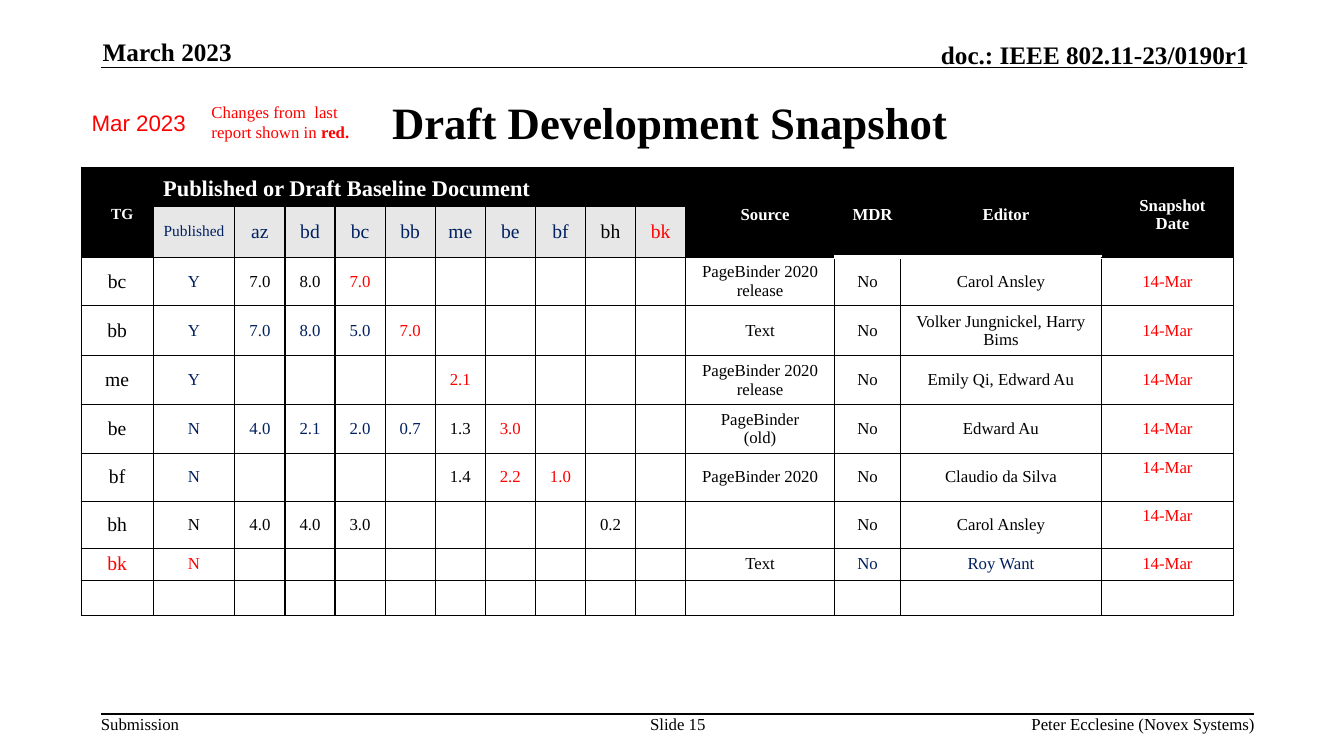
from dataclasses import dataclass

from lxml.etree import SubElement
from pptx import Presentation
from pptx.dml.color import RGBColor
from pptx.enum.shapes import MSO_CONNECTOR
from pptx.enum.text import MSO_ANCHOR, PP_ALIGN
from pptx.oxml.ns import qn
from pptx.util import Pt


@dataclass(frozen=True)
class Theme:
    """Colours, fonts and type sizes of the slide."""
    black: str = "000000"
    white: str = "FFFFFF"
    red: str = "FF0000"
    navy: str = "002060"
    grey: str = "E7E7E7"
    serif: str = "Times New Roman"
    sans: str = "Arial"
    title: int = 32
    running: int = 18
    group: int = 16
    label: int = 14
    body: int = 12
    small: int = 11


THEME = Theme()
MARKS = {"r:": THEME.red, "n:": THEME.navy}
COLUMNS = [51.4, 58.4] + [35.8] * 9 + [106.4, 47.1, 143.6, 94.3]
ROWS = [27.9, 36.4, 33.6, 35.7, 34.3, 33.6, 34.3, 33.6, 22.9, 25]
MERGED_HEADS = {0: "TG", 11: "Source", 12: "MDR", 13: "Editor", 14: "Snapshot\nDate"}
DRAFTS = ["n:Published", "n:az", "n:bd", "n:bc", "n:bb", "n:me", "n:be", "n:bf", "bh", "r:bk"]
FIRST_BODY_ROW = 2
RAISED_DATES = ("bf", "bh")
SNAPSHOT = [
    ["bc", "n:Y", "7.0", "8.0", "r:7.0", "", "", "", "", "", "",
     "PageBinder 2020 release", "No", "Carol Ansley", "r:14-Mar"],
    ["bb", "n:Y", "n:7.0", "n:8.0", "n:5.0", "r:7.0", "", "", "", "", "",
     "Text", "No", "Volker Jungnickel, Harry Bims", "r:14-Mar"],
    ["me", "n:Y", "", "", "", "", "r:2.1", "", "", "", "",
     "PageBinder 2020 release", "No", "Emily Qi, Edward Au", "r:14-Mar"],
    ["be", "n:N", "n:4.0", "n:2.1", "n:2.0", "n:0.7", "1.3", "r:3.0", "", "", "",
     "PageBinder\n(old)", "No", "Edward Au", "r:14-Mar"],
    ["bf", "n:N", "", "", "", "", "1.4", "r:2.2", "r:1.0", "", "",
     "PageBinder 2020", "No", "Claudio da Silva", "r:14-Mar"],
    ["bh", "N", "4.0", "4.0", "3.0", "", "", "", "", "0.2", "",
     "", "No", "Carol Ansley", "r:14-Mar"],
    ["r:bk", "r:N", "", "", "", "", "", "", "", "", "",
     "Text", "n:No", "n:Roy Want", "r:14-Mar"],
    [""] * 15,
]


def style(paragraph, size, color, bold=False, align=PP_ALIGN.LEFT, face=THEME.serif):
    """Set the alignment and font of a paragraph."""
    paragraph.alignment = align
    font = paragraph.font
    font.name, font.size, font.bold = face, Pt(size), bold
    font.color.rgb = RGBColor.from_string(color)


def add_text(slide, text, box, size, color=THEME.black, inset=(0, 0),
             anchor=MSO_ANCHOR.TOP, **look):
    """Add a wrapped text box and return its paragraph."""
    frame = slide.shapes.add_textbox(*map(Pt, box)).text_frame
    frame.word_wrap = True
    frame.vertical_anchor = anchor
    frame.margin_left = frame.margin_right = Pt(inset[0])
    frame.margin_top = frame.margin_bottom = Pt(inset[1])
    frame.text = text
    style(frame.paragraphs[0], size, color, **look)
    return frame.paragraphs[0]


def add_rule(slide, left, right, top):
    """Draw a thin horizontal line."""
    rule = slide.shapes.add_connector(
        MSO_CONNECTOR.STRAIGHT, Pt(left), Pt(top), Pt(right), Pt(top))
    rule.line.width = Pt(1)
    rule.line.color.rgb = RGBColor.from_string(THEME.black)
    SubElement(rule._element.spPr, qn("a:effectLst"))


def set_borders(cell, bottom=(THEME.black, 1), top=(THEME.black, 1)):
    """Draw the four borders of a cell."""
    properties = cell._tc.get_or_add_tcPr()
    sides = {"lnL": (THEME.black, 1), "lnR": (THEME.black, 1), "lnT": top, "lnB": bottom}
    for position, (side, (color, width)) in enumerate(sides.items()):
        border = SubElement(properties, qn(f"a:{side}"), w=str(Pt(width)))
        SubElement(SubElement(border, qn("a:solidFill")), qn("a:srgbClr"), val=color)
        properties.insert(position, border)


def fill_cell(cell, marked, size, fill, margins, color=THEME.black,
              bold=False, align=PP_ALIGN.CENTER):
    """Write a cell, taking its colour from the mark before the text."""
    color = MARKS.get(marked[:2], color)
    cell.text = marked[2:] if marked[:2] in MARKS else marked
    cell.vertical_anchor = MSO_ANCHOR.MIDDLE
    cell.margin_left, cell.margin_top, cell.margin_right, cell.margin_bottom = map(Pt, margins)
    cell.fill.solid()
    cell.fill.fore_color.rgb = RGBColor.from_string(fill)
    for paragraph in cell.text_frame.paragraphs:
        style(paragraph, size, color, bold, align)


def fill_head(table):
    """Merge and write the two header rows."""
    look = dict(fill=THEME.black, margins=(7.2, 3.6, 0, 0), color=THEME.white, bold=True)
    for column, head in MERGED_HEADS.items():
        cell = table.cell(0, column)
        cell.merge(table.cell(1, column))
        fill_cell(cell, head, THEME.body if column else THEME.small, **look)
    group = table.cell(0, 1)
    group.merge(table.cell(0, len(DRAFTS)))
    fill_cell(group, "Published or Draft Baseline Document", THEME.group,
              align=PP_ALIGN.LEFT, **look)
    for column, draft in enumerate(DRAFTS, 1):
        size = THEME.small if column == 1 else THEME.label
        fill_cell(table.cell(1, column), draft, size, THEME.grey, (7.2, 3.6, 7.2, 3.6))


def fill_body(table):
    """Write one row per task group."""
    for row, entries in enumerate(SNAPSHOT, FIRST_BODY_ROW):
        for column, entry in enumerate(entries):
            raised = column == len(COLUMNS) - 1 and entries[0] in RAISED_DATES
            fill_cell(table.cell(row, column), entry, THEME.body if column else THEME.label,
                      THEME.white, (7.2, 3, 7.2, 16 if raised else 3))


def add_snapshot(slide):
    """Add the table of draft versions."""
    table = slide.shapes.add_table(
        len(ROWS), len(COLUMNS), Pt(58), Pt(119.4), Pt(sum(COLUMNS)), Pt(sum(ROWS))).table
    table.first_row = table.horz_banding = False
    for column, width in zip(table.columns, COLUMNS):
        column.width = Pt(width)
    for row, height in zip(table.rows, ROWS):
        row.height = Pt(height)
    fill_head(table)
    fill_body(table)
    white_edge = {"bottom": (THEME.white, 3)}
    white_top = {"top": (THEME.white, 3)}
    for row in range(len(ROWS)):
        for column in range(len(COLUMNS)):
            edge = {}
            if column in (12, 13):
                edge = white_edge if row < FIRST_BODY_ROW else white_top if row == FIRST_BODY_ROW else {}
            set_borders(table.cell(row, column), **edge)


def main():
    """Build the slide and save it."""
    deck = Presentation()
    deck.slide_width, deck.slide_height = Pt(960), Pt(540)
    slide = deck.slides.add_slide(deck.slide_layouts[6])
    add_rule(slide, 72, 888, 48.2)
    add_rule(slide, 72, 895.7, 510)
    add_text(slide, "March 2023", (73.4, 25.9, 196.6, 21.6), THEME.running,
             bold=True, anchor=MSO_ANCHOR.BOTTOM)
    add_text(slide, "doc.: IEEE 802.11-23/0190r1", (524.9, 28.1, 367.2, 21.6), THEME.running,
             bold=True, align=PP_ALIGN.RIGHT, anchor=MSO_ANCHOR.BOTTOM)
    add_text(slide, "Draft Development Snapshot", (70.6, 45.4, 815.8, 83.5), THEME.title,
             inset=(7.2, 3.6), bold=True, align=PP_ALIGN.CENTER, anchor=MSO_ANCHOR.MIDDLE)
    add_snapshot(slide)
    add_text(slide, "Mar 2023", (58.3, 74.2, 95.8, 26.6), THEME.group, THEME.red,
             inset=(7.2, 3.6), face=THEME.sans)
    changes = add_text(slide, "Changes from  last report shown in ", (144, 69.1, 131.8, 36),
                       THEME.body, THEME.red, inset=(7.2, 3.6))
    emphasis = changes.add_run()
    emphasis.text = "red."
    emphasis.font.bold = True
    add_text(slide, "Submission", (72, 510, 60, 14.4), THEME.body)
    add_text(slide, "Slide 15", (456.5, 510, 55.4, 14.4), THEME.body, align=PP_ALIGN.CENTER)
    add_text(slide, "Peter Ecclesine (Novex Systems)", (562.3, 510, 334.1, 14.4), THEME.body,
             align=PP_ALIGN.RIGHT)
    deck.save("out.pptx")


if __name__ == "__main__":
    main()
